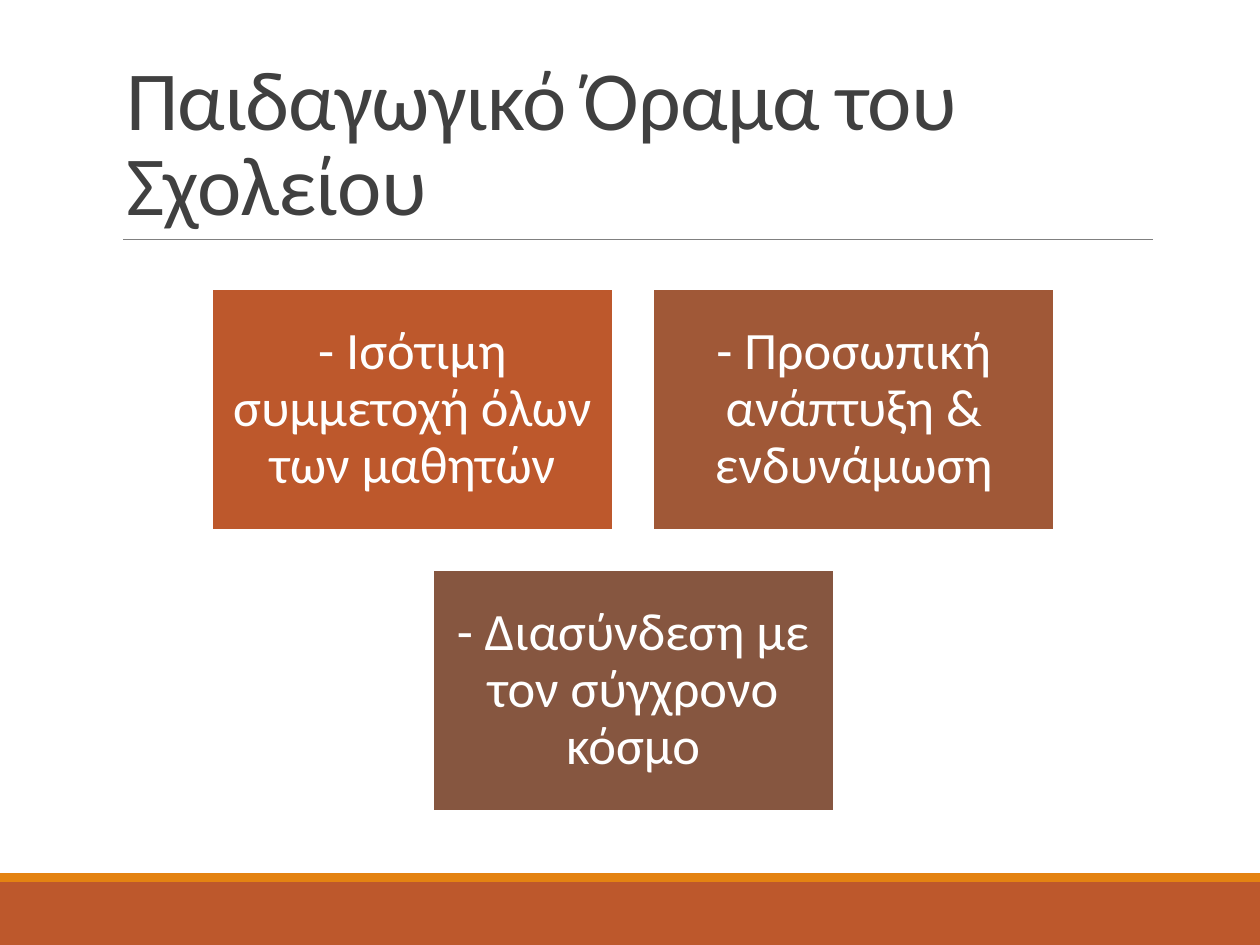
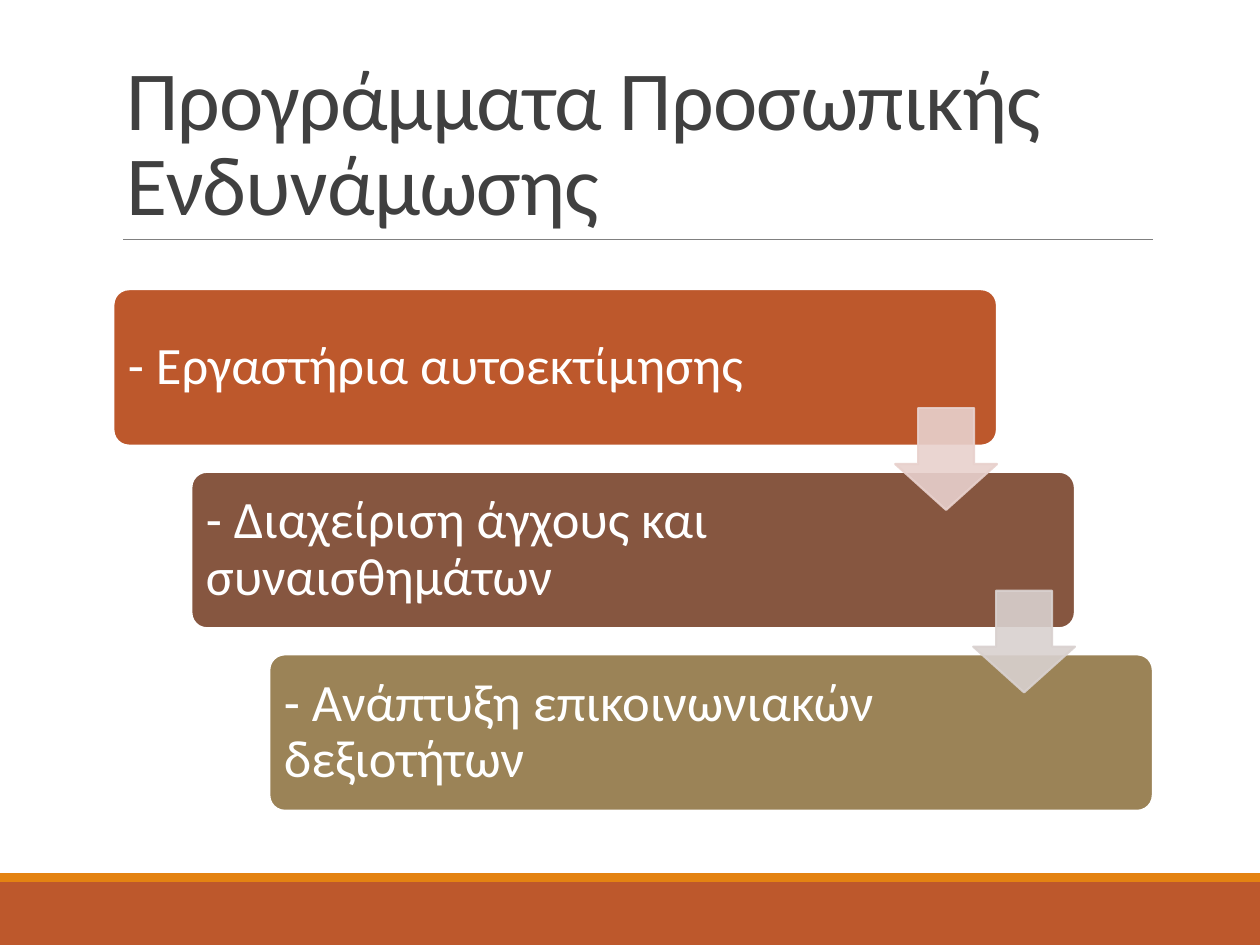
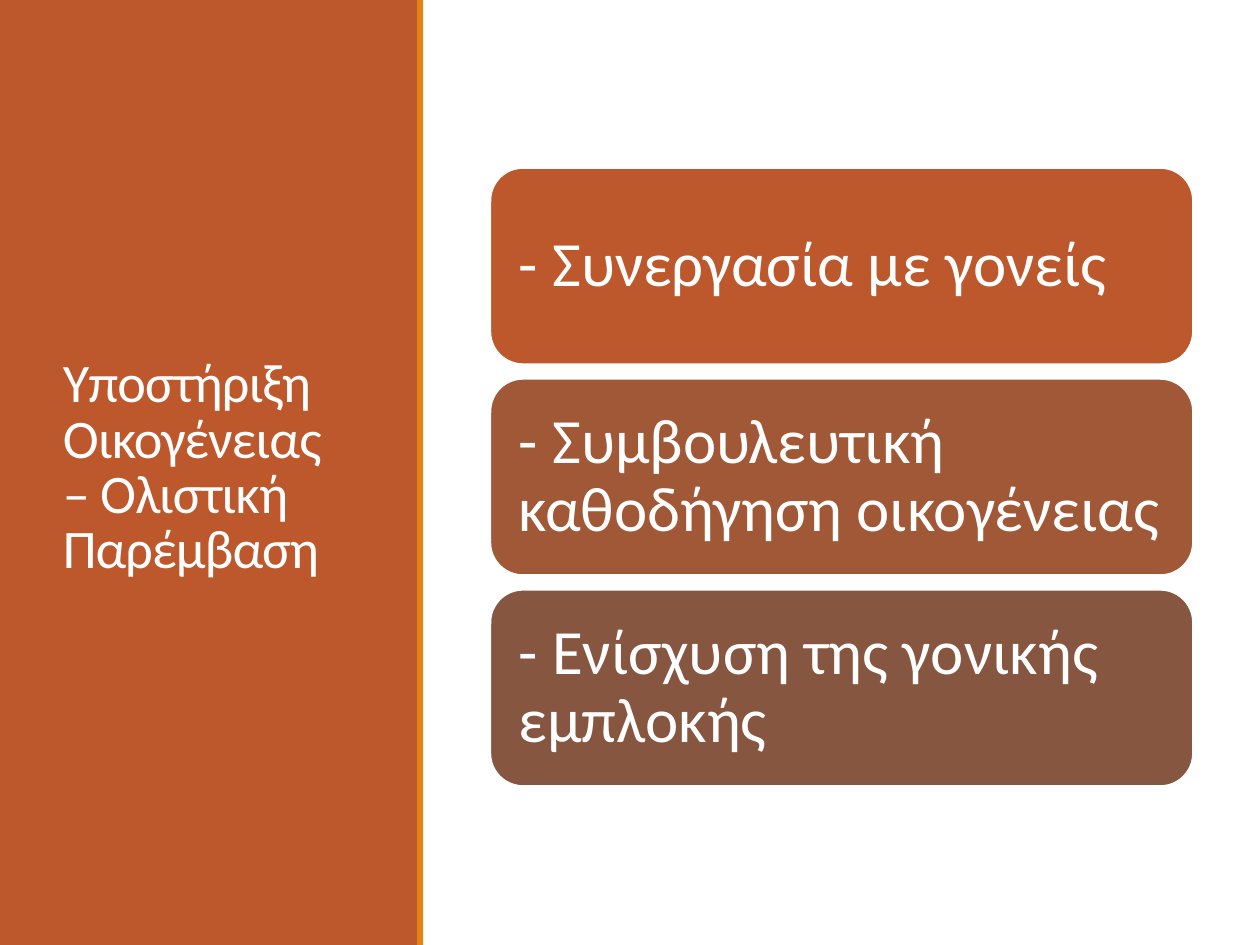
from collections import namedtuple
from dataclasses import dataclass

from lxml import etree
from pptx import Presentation
from pptx import util as u
from pptx.dml.color import RGBColor
from pptx.enum import shapes, text
from pptx.oxml.ns import qn


@dataclass(frozen=True)
class Theme:
    """Colours, font and type sizes of the deck."""
    font: str = "Calibri"
    white: str = "FFFFFF"
    ink: str = "404040"
    grey: str = "808080"
    rust: str = "BD582C"
    amber: str = "E48312"
    clay: str = "A05837"
    brown: str = "865640"
    olive: str = "9B8357"
    rose: str = "E8D1CD"
    ash: str = "D9D1CF"
    head: int = 48
    side: int = 31
    card: int = 30
    large: int = 36
    edge: float = 1.25


T = Theme()
Box = namedtuple("Box", "x y w h")
PAGE = Box(0, 0, 10, 7.5)
KIND = shapes.MSO_SHAPE


def part(box, x, y, w, h):
    """Cut a box out of another, in percent of its width and height."""
    return Box(box.x + box.w * x / 100, box.y + box.h * y / 100,
               box.w * w / 100, box.h * h / 100)


BODY = part(PAGE, 9, 30.6, 82.5, 55.2)


def place(item, box):
    """Move an item to a box."""
    item.left, item.top, item.width, item.height = map(u.Inches, box)


def write(item, words, size, color=T.white, align="LEFT", anchor="MIDDLE",
          lead=0.9, pads=None, track=0):
    """Put formatted text into a shape or placeholder."""
    frame = item.text_frame
    frame.word_wrap = True
    frame.auto_size = text.MSO_AUTO_SIZE.NONE
    frame.vertical_anchor = text.MSO_ANCHOR[anchor]
    if pads:
        (frame.margin_left, frame.margin_top,
         frame.margin_right, frame.margin_bottom) = map(u.Inches, pads)
    line = frame.paragraphs[0]
    line.alignment = text.PP_ALIGN[align]
    line.line_spacing = lead
    run = line.add_run()
    run.text = words
    run.font.name = T.font
    run.font.size = u.Pt(size)
    run.font.color.rgb = RGBColor.from_string(color)
    if track:
        run.font._element.set("spc", str(track))


def draw(slide, kind, box, fill, edge=None, adjust=(), alpha=None):
    """Add a filled shape with optional edge and opacity."""
    item = slide.shapes.add_shape(kind, *map(u.Inches, box))
    item.shadow.inherit = False
    item.fill.solid()
    item.fill.fore_color.rgb = RGBColor.from_string(fill)
    if edge:
        item.line.color.rgb = RGBColor.from_string(edge)
        item.line.width = u.Pt(T.edge)
    else:
        item.line.fill.background()
    for i, value in enumerate(adjust):
        item.adjustments[i] = value
    if alpha:
        for tint in item.element.spPr.iter(qn("a:srgbClr")):
            etree.SubElement(tint, qn("a:alpha")).set("val", str(alpha * 1000))
    return item


def title(slide, box, words, size, **form):
    """Fill the title placeholder and bring it to the front."""
    item = slide.shapes.title
    place(item, box)
    write(item, words, size, lead=0.85, track=-50, **form)
    item.element.getparent().append(item.element)


def frame(slide, words):
    """Draw the title, its rule and the bottom bands."""
    draw(slide, KIND.RECTANGLE, part(PAGE, 0, 93.33, 100, 6.67), T.rust)
    draw(slide, KIND.RECTANGLE, part(PAGE, 0, 92.4, 100, 0.93), T.amber)
    title(slide, part(PAGE, 9, 4.13, 82.5, 21.2), words, T.head,
          color=T.ink, anchor="BOTTOM")
    rule = part(PAGE, 9.8, 25.33, 81.7, 0)
    line = slide.shapes.add_connector(
        shapes.MSO_CONNECTOR.STRAIGHT, u.Inches(rule.x), u.Inches(rule.y),
        u.Inches(rule.x + rule.w), u.Inches(rule.y))
    line.line.color.rgb = RGBColor.from_string(T.grey)
    line.line.width = u.Pt(0.5)
    etree.SubElement(line.element.spPr, qn("a:effectLst"))


def panel(slide, box, words):
    """Draw the side panel with its title and amber edge."""
    draw(slide, KIND.RECTANGLE, box, T.rust)
    title(slide, part(box, 12, 7.6, 76.2, 84.13), words, T.side)
    draw(slide, KIND.RECTANGLE, part(box, 99.7, 0, 1.5, 100), T.amber)


def tiles(slide, box, items, cols=2):
    """Lay tiles in centred rows, with gaps a tenth of a tile wide."""
    wide = box.h / 1.3
    tall, gap = wide * 0.6, wide * 0.1
    for i, (words, fill) in enumerate(items):
        row, col = divmod(i, cols)
        count = min(cols, len(items) - row * cols)
        left = box.x + (box.w - count * wide - (count - 1) * gap) / 2
        spot = Box(left + col * (wide + gap), box.y + row * (tall + gap),
                   wide, tall)
        tile = draw(slide, KIND.RECTANGLE, spot, fill, T.white)
        write(tile, words, T.card, align="CENTER", pads=[0.12] * 4)


def stairs(slide, box, items, tints):
    """Lay cards as descending steps joined by arrows."""
    spots = [part(box, 7.5 * i, 35 * i, 85, 30) for i in range(len(items))]
    for spot, (words, fill) in zip(spots, items):
        card = draw(slide, KIND.ROUNDED_RECTANGLE, spot, fill, T.white, [0.1])
        write(card, words, T.card, pads=(0.08, 0.08, 1.5, 0.08))
    for spot, tint in zip(spots, tints):
        size = spot.h * 0.65
        tip = Box(spot.x + spot.w - size, spot.y + spot.h * 0.76, size, size)
        draw(slide, KIND.DOWN_ARROW, tip, tint, tint, (0.55, 0.45), 90)


def stack(slide, box, items):
    """Lay rounded cards in one column."""
    tall = 31.8
    step = (100 - tall) / (len(items) - 1)
    for i, (words, fill) in enumerate(items):
        card = draw(slide, KIND.ROUNDED_RECTANGLE,
                    part(box, 0, i * step, 100, tall), fill, T.white)
        write(card, words, T.large, pads=[0.15] * 4)


def main():
    """Build and save the deck."""
    deck = Presentation()
    deck.slide_width, deck.slide_height = u.Inches(PAGE.w), u.Inches(PAGE.h)
    vision, growth, family = [
        deck.slides.add_slide(deck.slide_layouts[5]) for _ in range(3)]

    frame(vision, "Παιδαγωγικό Όραμα του Σχολείου")
    tiles(vision, BODY, [
        ("- Ισότιμη συμμετοχή όλων των μαθητών", T.rust),
        ("- Προσωπική ανάπτυξη & ενδυνάμωση", T.clay),
        ("- Διασύνδεση με τον σύγχρονο κόσμο", T.brown)])

    frame(growth, "Προγράμματα Προσωπικής Ενδυνάμωσης")
    stairs(growth, BODY, [
        ("- Εργαστήρια αυτοεκτίμησης", T.rust),
        ("- Διαχείριση άγχους και συναισθημάτων", T.brown),
        ("- Ανάπτυξη επικοινωνιακών δεξιοτήτων", T.olive)], (T.rose, T.ash))

    panel(family, part(PAGE, 0, 0, 33.2, 100),
          "Υποστήριξη Οικογένειας – Ολιστική Παρέμβαση")
    stack(family, part(PAGE, 38.9, 17.75, 55.8, 65.45), [
        ("- Συνεργασία με γονείς", T.rust),
        ("- Συμβουλευτική καθοδήγηση οικογένειας", T.clay),
        ("- Ενίσχυση της γονικής εμπλοκής", T.brown)])

    deck.save("out.pptx")


if __name__ == "__main__":
    main()
